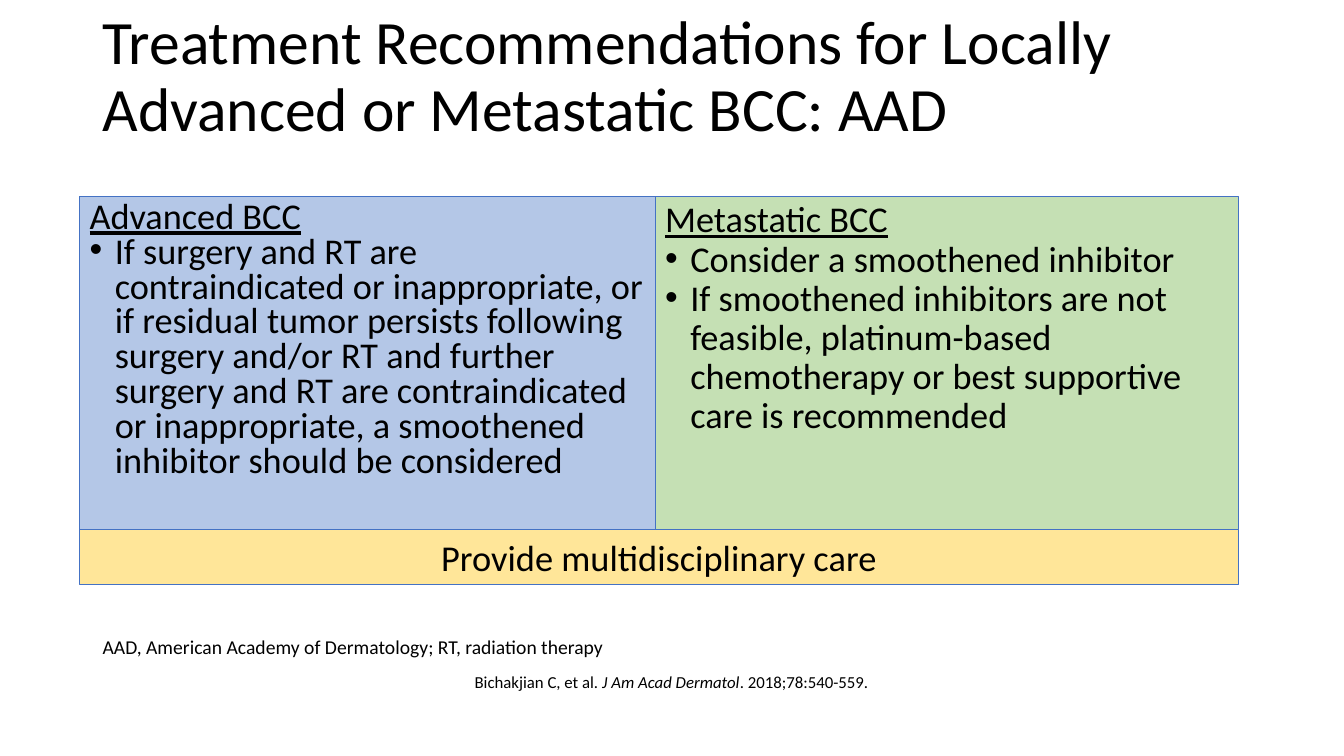
import lxml.etree
import pptx
import pptx.dml.color
import pptx.enum.shapes
import pptx.enum.text
import pptx.oxml.ns
import pptx.util

Pt = pptx.util.Pt
RGBColor = pptx.dml.color.RGBColor
ALIGN = pptx.enum.text.PP_ALIGN
ANCHOR = pptx.enum.text.MSO_ANCHOR
AUTO_SIZE = pptx.enum.text.MSO_AUTO_SIZE

BLACK = RGBColor(0x00, 0x00, 0x00)
BLUE = RGBColor(0xB4, 0xC7, 0xE7)
GREEN = RGBColor(0xC5, 0xE0, 0xB4)
YELLOW = RGBColor(0xFF, 0xE6, 0x99)
BORDER = RGBColor(0x44, 0x72, 0xC4)

# Grid of the recommendation panels, in points
LEFT, MIDDLE, RIGHT = 56.9, 468, 884.9
TOP, BOTTOM = 140.4, 378.4
INDENT = 18


def add_bullet(para):
    properties = para._p.get_or_add_pPr()
    properties.set("marL", str(Pt(INDENT)))
    properties.set("indent", str(-Pt(INDENT)))
    for tag, name, value in (("a:buFont", "typeface", "Arial"), ("a:buChar", "char", "•")):
        element = lxml.etree.SubElement(properties, pptx.oxml.ns.qn(tag))
        element.set(name, value)


def add_span(para, text, size, **formats):
    span = para.add_run()
    span.text = text
    settings = {"name": "Calibri", "size": Pt(size), **formats}
    for name, value in settings.items():
        setattr(span.font, name, value)
    span.font.color.rgb = BLACK


def set_frame(frame, **formats):
    settings = {"word_wrap": True, "vertical_anchor": ANCHOR.TOP, **formats}
    for name, value in settings.items():
        setattr(frame, name, value)


def add_text(page, place, spans, size, spacing=None, **formats):
    box = page.shapes.add_textbox(*map(Pt, place))
    set_frame(box.text_frame, **formats)
    para = box.text_frame.paragraphs[0]
    para.line_spacing = spacing
    for text, italic in spans:
        add_span(para, text, size, italic=italic)


def add_panel(page, place, fill):
    panel = page.shapes.add_shape(
        pptx.enum.shapes.MSO_SHAPE.RECTANGLE, *map(Pt, place))
    panel.shadow.inherit = False
    panel.fill.solid()
    panel.fill.fore_color.rgb = fill
    panel.line.color.rgb = BORDER
    panel.line.width = Pt(0.75)
    return panel.text_frame


def add_recommendations(page, left, right, fill, spacing, heading, points):
    frame = add_panel(page, (left, TOP, right - left, BOTTOM - TOP), fill)
    set_frame(frame)
    for number, text in enumerate([heading, *points]):
        para = frame.add_paragraph() if number else frame.paragraphs[0]
        if number:
            add_bullet(para)
        para.alignment = ALIGN.LEFT
        para.line_spacing = spacing
        add_span(para, text, 25.9, underline=number == 0)


def main():
    deck = pptx.Presentation()
    deck.slide_width, deck.slide_height = Pt(960), Pt(540)
    page = deck.slides.add_slide(deck.slide_layouts[6])

    # Title
    title = "Treatment Recommendations for Locally Advanced or Metastatic BCC: AAD"
    add_text(page, (66.2, 3.6, 828, 104.4), [(title, False)], 44, 0.9,
             vertical_anchor=ANCHOR.MIDDLE)

    # Recommendations by stage
    add_recommendations(page, LEFT, MIDDLE, BLUE, 0.8, "Advanced BCC", [
        "If surgery and RT are contraindicated or inappropriate, or if residual "
        "tumor persists following surgery and/or RT and further surgery and RT are "
        "contraindicated or inappropriate, a smoothened inhibitor should be considered"])
    add_recommendations(page, MIDDLE, RIGHT, GREEN, 0.9, "Metastatic BCC", [
        "Consider a smoothened inhibitor",
        "If smoothened inhibitors are not feasible, platinum-based chemotherapy "
        "or best supportive care is recommended"])

    # Shared recommendation
    care = add_panel(page, (LEFT, BOTTOM, RIGHT - LEFT, 38.9), YELLOW)
    set_frame(care, auto_size=AUTO_SIZE.SHAPE_TO_FIT_TEXT)
    care.paragraphs[0].alignment = ALIGN.CENTER
    add_span(care.paragraphs[0], "Provide multidisciplinary care", 26)

    # Citation and abbreviations
    fitted = {"word_wrap": False, "auto_size": AUTO_SIZE.SHAPE_TO_FIT_TEXT}
    citation = [("Bichakjian C, et al. ", False), ("J Am Acad Dermatol", True),
                (". 2018;78:540-559.", False)]
    add_text(page, (331.9, 476.6, 299.5, 21.6), citation, 12, **fitted)
    abbreviations = "AAD, American Academy of Dermatology; RT, radiation therapy"
    add_text(page, (66.2, 450, 375.8, 24.5), [(abbreviations, False)], 14, **fitted)

    deck.save("out.pptx")


if __name__ == "__main__":
    main()
